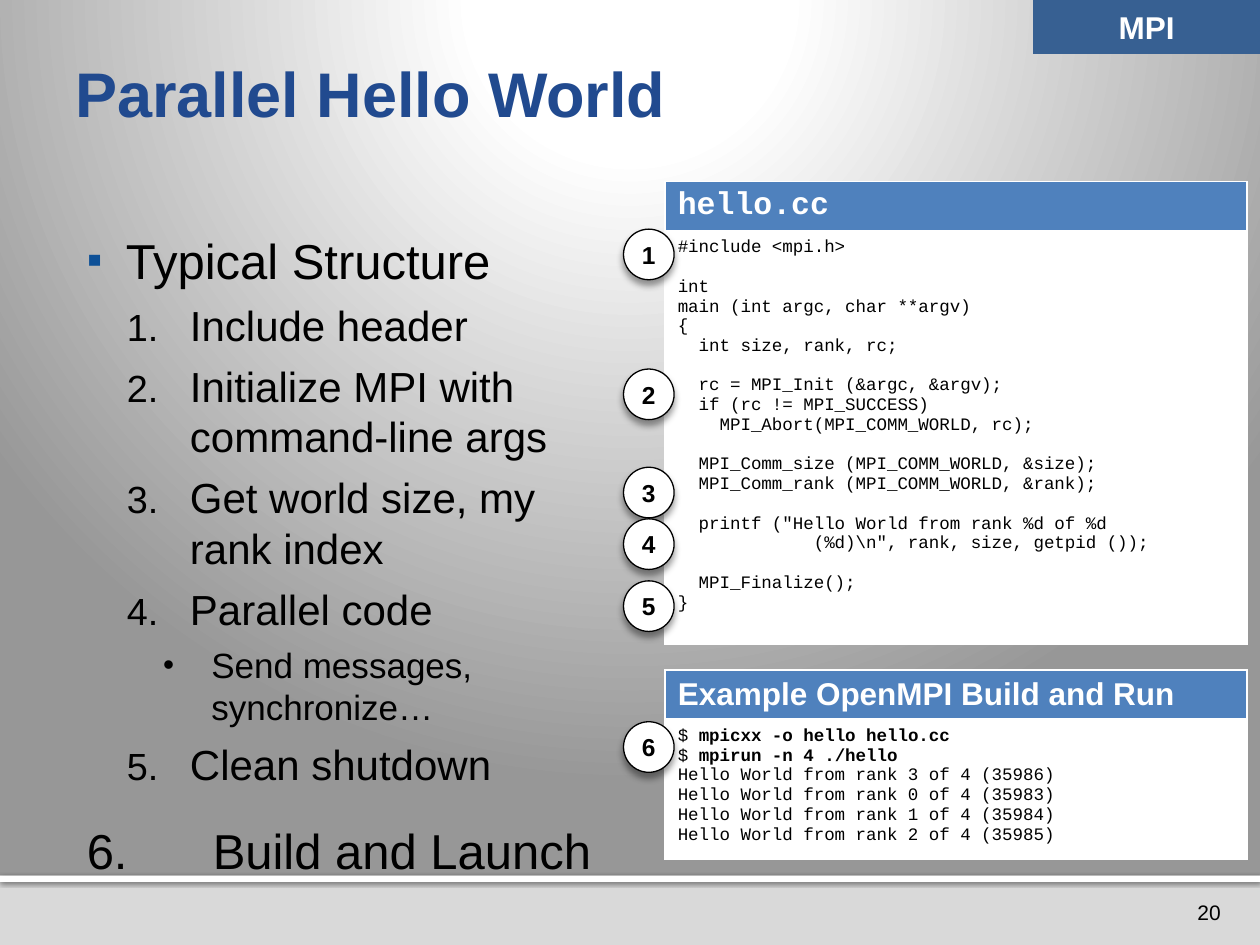
from lxml import etree
from pptx import Presentation
from pptx import util as u
from pptx.dml.color import RGBColor
from pptx.enum import shapes, text
from pptx.oxml import parse_xml
from pptx.oxml.ns import nsdecls, qn

BLACK = RGBColor(0, 0, 0)
WHITE = RGBColor(255, 255, 255)
TITLE_BLUE = RGBColor(0x21, 0x4A, 0x8F)
TAG_BLUE = RGBColor(0x37, 0x60, 0x92)
HEADER_BLUE = RGBColor(0x4F, 0x81, 0xBD)
FOOTER_GREY = RGBColor(0xD9, 0xD9, 0xD9)
BULLET_BLUE = RGBColor(0x0D, 0x50, 0x97)
SANS, MONO = "Arial", "Courier New"


def add_span(para, words, size, color=BLACK, font=SANS, bold=False):
    span = para.add_run()
    span.text = words
    for name, value in {"name": font, "size": u.Pt(size), "bold": bold}.items():
        setattr(span.font, name, value)
    span.font.color.rgb = color


def add_block(kind, left, top, width, height, fill, shadow=None):
    """Add a borderless filled shape; shadow is (alpha %, blur pt, distance pt), cast downwards."""
    block = page.shapes.add_shape(kind, u.Cm(left), u.Cm(top), u.Cm(width), u.Cm(height))
    block.shadow.inherit = False
    block.fill.solid()
    block.fill.fore_color.rgb = fill
    block.line.fill.background()
    if shadow:
        alpha, blur, distance = shadow
        effects = block._element.spPr.find(qn("a:effectLst"))
        effects.append(parse_xml(
            f'<a:outerShdw {nsdecls("a")} blurRad="{u.Pt(blur)}" dist="{u.Pt(distance)}" '
            f'dir="5400000" algn="ctr" rotWithShape="0"><a:srgbClr val="000000">'
            f'<a:alpha val="{alpha * 1000}"/></a:srgbClr></a:outerShdw>'))
    return block


deck = Presentation()
deck.slide_width, deck.slide_height = u.Cm(25.4), u.Cm(19.05)
page = deck.slides.add_slide(deck.slide_layouts[6])

# Background: a radial gradient centred above the slide
page.background.fill.gradient()
gradient = page._element.find(".//" + qn("a:gradFill"))
stops = "".join(f'<a:gs pos="{at * 1000}"><a:srgbClr val="{color}"/></a:gs>'
                for at, color in ((0, WHITE), (12, WHITE), (20, WHITE), (100, "979797")))
gradient.getparent().replace(gradient, parse_xml(
    f'<a:gradFill {nsdecls("a")} rotWithShape="1"><a:gsLst>{stops}</a:gsLst><a:path path="circle">'
    '<a:fillToRect l="10000" t="-25000" r="10000" b="125000"/></a:path></a:gradFill>'))

# Footer
RECTANGLE = shapes.MSO_SHAPE.RECTANGLE
add_block(RECTANGLE, 0, 17.65, 25.4, 1.4, FOOTER_GREY, (38, 3.1, 2))
add_block(RECTANGLE, 0, 17.65, 25.4, 0.13, WHITE, (60, 2.5, 0.8))
number = page.shapes.add_textbox(u.Cm(23.7), u.Cm(17.98), u.Cm(1.35), u.Cm(0.81)).text_frame
number.vertical_anchor = text.MSO_ANCHOR.MIDDLE
number.paragraphs[0].alignment = text.PP_ALIGN.CENTER
add_span(number.paragraphs[0], "20", 12)

# Title
title = page.shapes.add_textbox(u.Cm(1.27), u.Cm(0.61), u.Cm(22.86), u.Cm(3.48)).text_frame
for name, value in {"word_wrap": True, "vertical_anchor": text.MSO_ANCHOR.BOTTOM,
                    "margin_bottom": u.Cm(1.47)}.items():
    setattr(title, name, value)
title.paragraphs[0].line_spacing = u.Pt(38)
add_span(title.paragraphs[0], "Parallel Hello World", 36, TITLE_BLUE, bold=True)

# Outline: level, bullet, text
body = page.shapes.add_textbox(u.Cm(1.27), u.Cm(4.34), u.Cm(11.02), u.Cm(13.21)).text_frame
for name, value in {"word_wrap": True, "margin_left": u.Cm(0.48), "margin_top": u.Cm(0.3),
                    "margin_right": u.Cm(0.25), "margin_bottom": u.Cm(0.13)}.items():
    setattr(body, name, value)
LEVELS = {0: (28, 0.79, 0.79), 1: (24, 2.08, 1.27), 2: (20, 2.51, 0.97)}  # size, indent, hanging
OUTLINE = [
    (0, "▪", "Typical Structure"),
    (1, "1.", "Include header"),
    (1, "1.", "Initialize MPI with command-line args"),
    (1, "1.", "Get world size, my rank index"),
    (1, "1.", "Parallel code"),
    (2, "•", "Send messages, synchronize…"),
    (1, "1.", "Clean shutdown"),
    (0, None, "6.\tBuild and Launch"),
]
for index, (level, bullet, words) in enumerate(OUTLINE):
    para = body.paragraphs[0] if index == 0 else body.add_paragraph()
    size, indent, hanging = LEVELS[level]
    para.level = level
    props = para._p.get_or_add_pPr()
    if bullet:
        props.set("marL", str(u.Cm(indent)))
        props.set("indent", str(-u.Cm(hanging)))
        color = BULLET_BLUE if level == 0 else BLACK
        etree.SubElement(etree.SubElement(props, qn("a:buClr")), qn("a:srgbClr"), val=str(color))
        etree.SubElement(props, qn("a:buSzPct"), val="90000")
        etree.SubElement(props, qn("a:buFont"), typeface=SANS)
        if bullet == "1.":
            etree.SubElement(props, qn("a:buAutoNum"), type="arabicPeriod")
        else:
            etree.SubElement(props, qn("a:buChar"), char=bullet)
    else:
        etree.SubElement(props, qn("a:buNone"))
        tabs = etree.SubElement(props, qn("a:tabLst"))
        etree.SubElement(tabs, qn("a:tab"), pos=str(u.Cm(2.54)), algn="l")
    para.space_before = u.Pt(12 if level == 0 and index else 0)
    para.space_after = u.Pt(6)
    add_span(para, words, size)

# Section tag
tag = add_block(RECTANGLE, 20.83, 0, 4.57, 1.09, TAG_BLUE).text_frame
tag.vertical_anchor = text.MSO_ANCHOR.MIDDLE
tag.paragraphs[0].alignment = text.PP_ALIGN.CENTER
add_span(tag.paragraphs[0], "MPI", 18, WHITE, bold=True)

# Listings: a header row over a row of code; a command after the prompt is bold
SOURCE = r"""#include <mpi.h>

int
main (int argc, char **argv)
{
  int size, rank, rc;

  rc = MPI_Init (&argc, &argv);
  if (rc != MPI_SUCCESS)
    MPI_Abort(MPI_COMM_WORLD, rc);

  MPI_Comm_size (MPI_COMM_WORLD, &size);
  MPI_Comm_rank (MPI_COMM_WORLD, &rank);

  printf ("Hello World from rank %d of %d
             (%d)\n", rank, size, getpid ());

  MPI_Finalize();
}"""
SESSION = """$ mpicxx -o hello hello.cc
$ mpirun -n 4 ./hello
Hello World from rank 3 of 4 (35986)
Hello World from rank 0 of 4 (35983)
Hello World from rank 1 of 4 (35984)
Hello World from rank 2 of 4 (35985)"""
PROMPT = "$ "
LISTINGS = [  # heading, heading font, code, top, code height
    ("Example OpenMPI Build and Run", SANS, SESSION, 13.51, 2.68),
    ("hello.cc", MONO, SOURCE, 3.66, 7.87),
]
for heading, font, code, top, height in LISTINGS:
    frame = page.shapes.add_table(2, 1, u.Cm(13.41), u.Cm(top), u.Cm(11.73), u.Cm(height + 1))
    table = frame.table
    table.rows[0].height, table.rows[1].height = u.Cm(1), u.Cm(height)
    header, listing = table.cell(0, 0), table.cell(1, 0)
    for cell, fill, bottom in ((header, HEADER_BLUE, 3), (listing, WHITE, 1)):
        cell.fill.solid()
        cell.fill.fore_color.rgb = fill
        for index, (side, width) in enumerate((("L", 1), ("R", 1), ("T", 1), ("B", bottom))):
            cell._tc.tcPr.insert(index, parse_xml(
                f'<a:ln{side} {nsdecls("a")} w="{u.Pt(width)}"><a:solidFill>'
                f'<a:srgbClr val="{WHITE}"/></a:solidFill></a:ln{side}>'))
    add_span(header.text_frame.paragraphs[0], heading, 18, WHITE, font, True)
    for index, line in enumerate(code.split("\n")):
        para = listing.text_frame.paragraphs[0] if index == 0 else listing.text_frame.add_paragraph()
        if line.startswith(PROMPT):
            add_span(para, PROMPT, 10, font=MONO)
            add_span(para, line[len(PROMPT):], 10, font=MONO, bold=True)
        elif line:
            add_span(para, line, 10, font=MONO)
        else:
            end = etree.SubElement(para._p, qn("a:endParaRPr"), sz="1000")
            etree.SubElement(end, qn("a:latin"), typeface=MONO)

# Step markers beside the code
for step, top in enumerate((4.62, 7.44, 9.42, 10.46, 11.71, 14.55), start=1):
    marker = add_block(shapes.MSO_SHAPE.OVAL, 12.57, top, 1.02, 1.02, WHITE, (40, 4, 3))
    marker.line.color.rgb = BLACK
    marker.line.width = u.Pt(0.75)
    label = marker.text_frame
    for name in ("margin_left", "margin_right", "margin_top", "margin_bottom"):
        setattr(label, name, 0)
    label.vertical_anchor = text.MSO_ANCHOR.MIDDLE
    label.paragraphs[0].alignment = text.PP_ALIGN.CENTER
    add_span(label.paragraphs[0], str(step), 14, bold=True)

deck.save("out.pptx")
